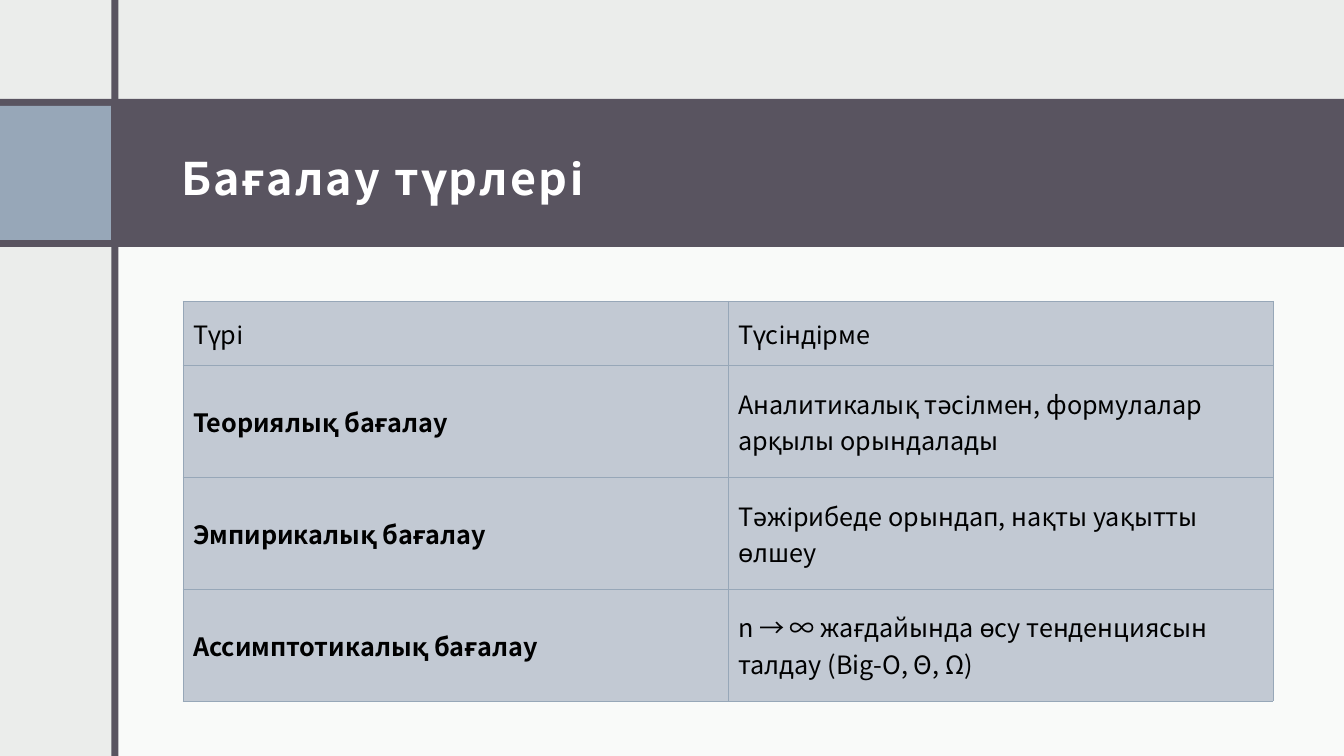
import dataclasses
import typing

import lxml.etree
import pptx
import pptx.dml.color
import pptx.enum.shapes
import pptx.enum.text
import pptx.oxml.ns
import pptx.util

SLIDE_WIDTH = pptx.util.Inches(13.33)
SLIDE_HEIGHT = pptx.util.Inches(7.5)
FONT = "Noto Sans CJK JP"
COLORS = {
    "background": "EBEDEB",
    "panel": "FFFFFF",
    "band": "595460",
    "accent": "97A7B8",
    "cell": "C2C9D3",
    "title": "FFFFFF",
    "text": "000000",
}


@dataclasses.dataclass(frozen=True)
class Box:
    """Left, top, width and height in percent of the slide's size."""
    left: float
    top: float
    width: float
    height: float

    def lengths(self) -> tuple[int, int, int, int]:
        return (across(self.left), down(self.top), across(self.width), down(self.height))


@dataclasses.dataclass(frozen=True)
class Block:
    box: Box
    color: str
    opacity: int = 100


BLOCKS = [
    Block(Box(8.55, 31.07, 91.45, 68.93), "panel", 75),
    Block(Box(0, 13.07, 100, 19.6), "band"),
    Block(Box(0, 14, 8.25, 17.73), "accent"),
    Block(Box(8.29, 0, 0.53, 100), "band"),
]
TITLE_BOX = Box(12.6, 14, 82.13, 17.73)
COLUMN_WIDTH = 40.55
HEADER_HEIGHT, ROW_HEIGHT = 8.47, 14.8
ROWS = [
    ("Түрі", "Түсіндірме"),
    ("Теориялық бағалау", "Аналитикалық тәсілмен, формулалар арқылы орындалады"),
    ("Эмпирикалық бағалау", "Тәжірибеде орындап, нақты уақытты өлшеу"),
    ("Ассимптотикалық бағалау", "n → ∞ жағдайында өсу тенденциясын талдау (Big-O, Θ, Ω)"),
]
ROW_HEIGHTS = [HEADER_HEIGHT] + [ROW_HEIGHT] * (len(ROWS) - 1)
TABLE_BOX = Box(13.62, 39.87, 2 * COLUMN_WIDTH, sum(ROW_HEIGHTS))


def across(percent: float) -> int:
    return round(SLIDE_WIDTH * percent / 100)


def down(percent: float) -> int:
    return round(SLIDE_HEIGHT * percent / 100)


def apply_format(target: typing.Any, values: dict[str, typing.Any]) -> None:
    for name, value in values.items():
        setattr(target, name, value)


def paint(fill: typing.Any, color: str) -> None:
    fill.solid()
    fill.fore_color.rgb = pptx.dml.color.RGBColor.from_string(COLORS[color])


def add_child(parent: typing.Any, tag: str, **attributes: str) -> typing.Any:
    return lxml.etree.SubElement(parent, pptx.oxml.ns.qn(tag), attributes)


def write(frame: typing.Any, text: str, size: int, color: str, bold: bool) -> typing.Any:
    """Fill a text frame with one run and return that run."""
    run = frame.paragraphs[0].add_run()
    run.text = text
    apply_format(run.font, {"name": FONT, "size": pptx.util.Pt(size), "bold": bold})
    paint(run.font.fill, color)
    return run


def draw_block(slide: typing.Any, block: Block) -> None:
    shape = slide.shapes.add_shape(
        pptx.enum.shapes.MSO_SHAPE.RECTANGLE, *block.box.lengths())
    shape.shadow.inherit = False
    shape.line.fill.background()
    paint(shape.fill, block.color)
    if block.opacity < 100:
        color = shape.fill._xPr.find(".//" + pptx.oxml.ns.qn("a:srgbClr"))
        add_child(color, "a:alpha", val=str(block.opacity * 1000))


def draw_title(slide: typing.Any) -> None:
    frame = slide.shapes.add_textbox(*TITLE_BOX.lengths()).text_frame
    apply_format(frame, {
        "word_wrap": True,
        "vertical_anchor": pptx.enum.text.MSO_ANCHOR.MIDDLE,
        "margin_left": pptx.util.Inches(0.12),
        "margin_top": pptx.util.Inches(0.2),
        "margin_right": pptx.util.Inches(0.12),
        "margin_bottom": pptx.util.Inches(0.1),
    })
    run = write(frame, "Бағалау түрлері", 32, "title", True)
    run.font._element.set("spc", "150")


def draw_borders(cell: typing.Any) -> None:
    properties = cell._tc.get_or_add_tcPr()
    for side in ("a:lnL", "a:lnR", "a:lnT", "a:lnB"):
        line = add_child(properties, side, w=str(pptx.util.Pt(0.75)))
        add_child(add_child(line, "a:solidFill"), "a:srgbClr", val=COLORS["accent"])


def draw_table(slide: typing.Any) -> None:
    table = slide.shapes.add_table(len(ROWS), 2, *TABLE_BOX.lengths()).table
    apply_format(table, {"first_row": False, "horz_banding": False})
    for column in table.columns:
        column.width = across(COLUMN_WIDTH)
    for row_index, (row, height) in enumerate(zip(table.rows, ROW_HEIGHTS)):
        row.height = down(height)
        for column_index, cell in enumerate(row.cells):
            cell.vertical_anchor = pptx.enum.text.MSO_ANCHOR.MIDDLE
            draw_borders(cell)
            paint(cell.fill, "cell")
            is_kind = row_index > 0 and column_index == 0
            write(cell.text_frame, ROWS[row_index][column_index], 18, "text", is_kind)


def main() -> None:
    presentation = pptx.Presentation()
    apply_format(presentation, {"slide_width": SLIDE_WIDTH, "slide_height": SLIDE_HEIGHT})
    slide = presentation.slides.add_slide(presentation.slide_layouts[6])
    paint(slide.background.fill, "background")
    for block in BLOCKS:
        draw_block(slide, block)
    draw_title(slide)
    draw_table(slide)
    presentation.save("out.pptx")


if __name__ == "__main__":
    main()
